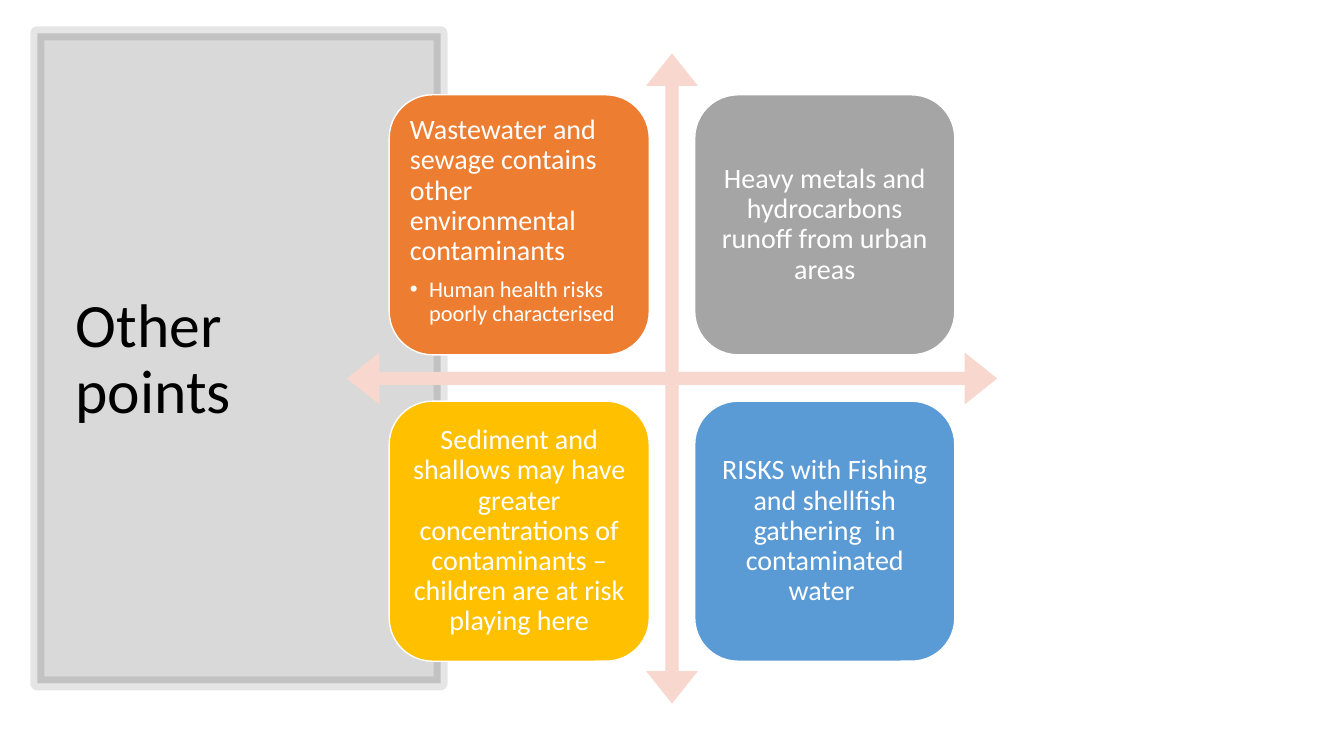
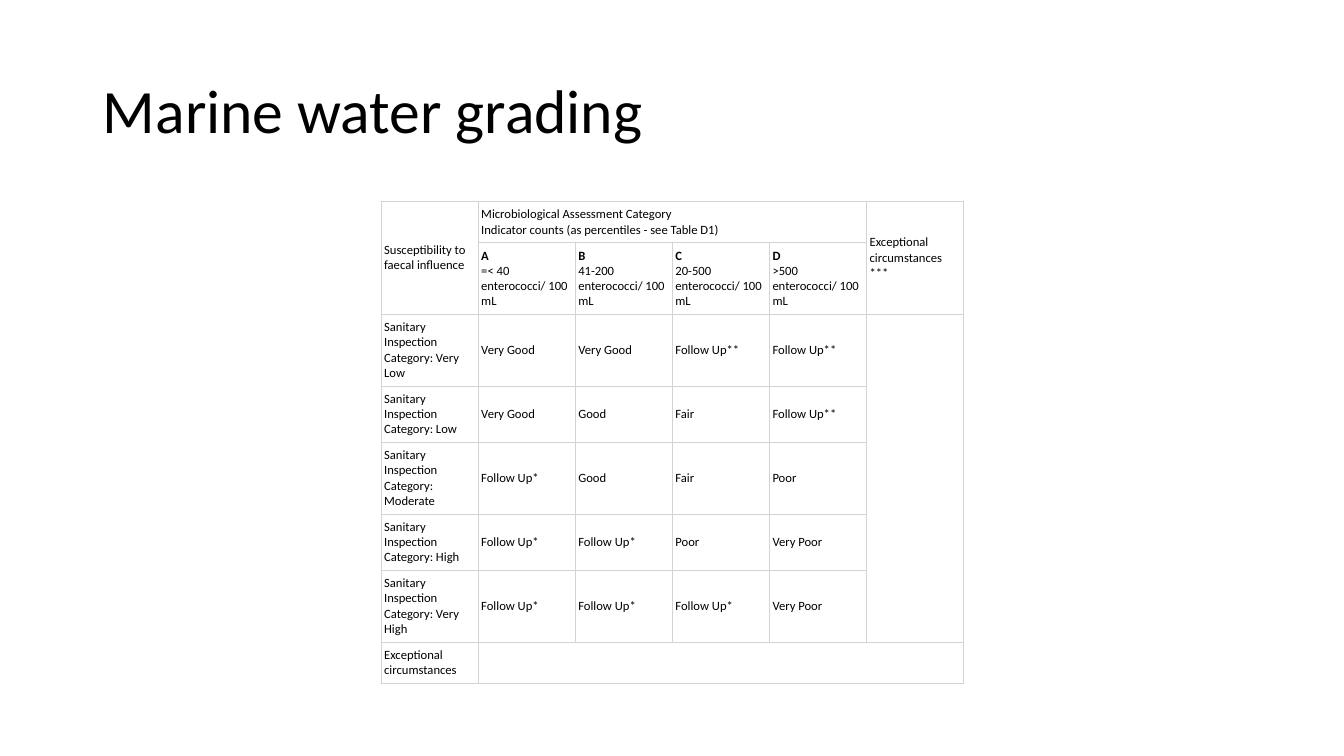
from dataclasses import dataclass
from typing import Optional

from lxml.etree import SubElement
from pptx import Presentation
from pptx.dml.color import RGBColor
from pptx.enum.shapes import MSO_SHAPE
from pptx.enum.text import MSO_ANCHOR, MSO_AUTO_SIZE, PP_ALIGN
from pptx.oxml.ns import qn
from pptx.util import Emu, Pt

SCALE = 9144
FONT = "Calibri"
HUES = {
    "ink": "000000", "paper": "FFFFFF", "arrow": "F8D7CE", "rule": "D3D3D3",
    "orange": "ED7D31", "gray": "A5A5A5", "gold": "FFC000", "blue": "5B9BD5",
}


@dataclass(frozen=True)
class Box:
    """A place on the slide in px."""
    left: int
    top: int
    width: int
    height: int


@dataclass(frozen=True)
class Card:
    """A coloured card with an optional bullet."""
    text: str
    hue: str
    point: Optional[str] = None


@dataclass(frozen=True)
class Span:
    """A merged block of table cells."""
    row: int
    col: int
    last_row: int
    last_col: int


CARDS = [
    Card("Wastewater and sewage contains other environmental contaminants",
         "orange", "Human health risks poorly characterised"),
    Card("Heavy metals and hydrocarbons runoff from urban areas", "gray"),
    Card("Sediment and shallows may have greater concentrations of "
         "contaminants – children are at risk playing here", "gold"),
    Card("RISKS with Fishing and shellfish gathering  in contaminated water ",
         "blue"),
]
CROSS = Box(344, 53, 645, 645)
FIRST = Box(386, 94, 258, 258)
STEP_X, STEP_Y = 303, 304

GRADES = [
    ["Susceptibility to faecal influence",
     "Microbiological Assessment Category\n"
     "Indicator counts (as percentiles - see Table D1)",
     "", "", "", "Exceptional circumstances ***"],
    ["", "A\n=< 40 enterococci/ 100 mL", "B\n41-200 enterococci/ 100 mL",
     "C\n20-500 enterococci/ 100 mL", "D\n>500 enterococci/ 100 mL", ""],
    ["Sanitary Inspection Category: Very Low",
     "Very Good", "Very Good", "Follow Up**", "Follow Up**", ""],
    ["Sanitary Inspection Category: Low",
     "Very Good", "Good", "Fair", "Follow Up**", ""],
    ["Sanitary Inspection Category: Moderate",
     "Follow Up*", "Good", "Fair", "Poor", ""],
    ["Sanitary Inspection Category: High",
     "Follow Up*", "Follow Up*", "Poor", "Very Poor", ""],
    ["Sanitary Inspection Category: Very High",
     "Follow Up*", "Follow Up*", "Follow Up*", "Very Poor", ""],
    ["Exceptional circumstances", "", "", "", "", ""],
]
ROWS = [41, 71, 71, 56, 71, 56, 71, 41]
SPANS = [Span(0, 0, 1, 0), Span(0, 1, 0, 4), Span(0, 5, 1, 5),
         Span(2, 5, 6, 5), Span(7, 1, 7, 5)]


def px(size: int) -> Emu:
    """Turn px into EMU."""
    return Emu(size * SCALE)


def place(box: Box) -> tuple:
    """Return the box as four EMU lengths."""
    return px(box.left), px(box.top), px(box.width), px(box.height)


def tint(hue: str) -> RGBColor:
    """Look up a colour."""
    return RGBColor.from_string(HUES[hue])


def fade(fill, share: int) -> None:
    """Make a solid fill partly clear, with share as percent opaque."""
    color = fill._xPr.find(qn("a:solidFill"))[0]
    SubElement(color, qn("a:alpha"), val=str(share * 1000))


def write(para, text: str, size: int, hue: str, bold: bool = False) -> None:
    """Add one styled run."""
    run = para.add_run()
    run.text = text
    run.font.name, run.font.size, run.font.bold = FONT, Pt(size), bold
    run.font.color.rgb = tint(hue)


def inset(item, side: int, edge: int) -> None:
    """Set the margins of a frame or cell."""
    item.margin_left = item.margin_right = px(side)
    item.margin_top = item.margin_bottom = px(edge)


def head(slide, text: str, box: Box):
    """Fill and place the title."""
    title = slide.shapes.title
    title.left, title.top, title.width, title.height = place(box)
    frame = title.text_frame
    frame.word_wrap, frame.auto_size = True, MSO_AUTO_SIZE.NONE
    frame.vertical_anchor = MSO_ANCHOR.MIDDLE
    para = frame.paragraphs[0]
    para.alignment, para.line_spacing = PP_ALIGN.LEFT, 0.9
    write(para, text, 44, "ink")
    return title


def shape(owner, kind: MSO_SHAPE, box: Box, hue: str):
    """Add a flat filled shape without a line."""
    item = owner.shapes.add_shape(kind, *place(box))
    item.shadow.inherit = False
    item.fill.solid()
    item.fill.fore_color.rgb = tint(hue)
    item.line.fill.background()
    return item


def edge(item, hue: str, width: int) -> None:
    """Give a shape a solid line."""
    item.line.color.rgb = tint(hue)
    item.line.width = Pt(width)


def dot(para) -> None:
    """Turn a paragraph into a hanging bullet."""
    para.level = 1
    props = para._p.get_or_add_pPr()
    props.set("marL", str(px(19)))
    props.set("indent", str(px(-19)))
    SubElement(props, qn("a:buFont"), typeface="Arial")
    SubElement(props, qn("a:buChar"), char="•")


def draw(group, card: Card, box: Box) -> None:
    """Draw a card and its text."""
    item = shape(group, MSO_SHAPE.ROUNDED_RECTANGLE, box, card.hue)
    edge(item, "paper", 1)
    frame = item.text_frame
    frame.word_wrap = True
    inset(frame, 8, 8)
    frame.vertical_anchor = MSO_ANCHOR.TOP if card.point else MSO_ANCHOR.MIDDLE
    para = frame.paragraphs[0]
    para.alignment = PP_ALIGN.LEFT if card.point else PP_ALIGN.CENTER
    para.line_spacing = 0.9
    write(para, card.text, 20, "paper")
    if card.point:
        para.space_after = Pt(8)
        para = frame.add_paragraph()
        para.alignment, para.line_spacing = PP_ALIGN.LEFT, 0.9
        dot(para)
        write(para, card.point, 16, "paper")


def points(slide) -> None:
    """Build the slide of four cards round a cross."""
    title = head(slide, "Other points", Box(65, 70, 255, 575))
    panel = shape(slide, MSO_SHAPE.RECTANGLE, Box(37, 33, 400, 645), "ink")
    fade(panel.fill, 15)
    edge(panel, "ink", 10)
    fade(panel.line.fill, 10)
    title.element.addprevious(panel.element)
    group = slide.shapes.add_group_shape()
    cross = shape(group, MSO_SHAPE.QUAD_ARROW, CROSS, "arrow")
    for spot, size in enumerate((0.02, 0.04, 0.05)):
        cross.adjustments[spot] = size
    for spot, card in enumerate(CARDS):
        row, col = divmod(spot, 2)
        draw(group, card, Box(FIRST.left + col * STEP_X,
                              FIRST.top + row * STEP_Y,
                              FIRST.width, FIRST.height))


def frame_cell(cell) -> None:
    """Rule all sides of a cell and clear its fill."""
    props = cell._tc.get_or_add_tcPr()
    for side in ("a:lnL", "a:lnR", "a:lnT", "a:lnB"):
        line = SubElement(props, qn(side), w=str(Pt(0.75)))
        fill = SubElement(line, qn("a:solidFill"))
        SubElement(fill, qn("a:srgbClr"), val=HUES["rule"])
    cell.fill.background()
    inset(cell, 3, 5)
    cell.vertical_anchor = MSO_ANCHOR.MIDDLE


def grades(slide) -> None:
    """Build the slide with the grading table."""
    head(slide, "Marine water grading", Box(92, 40, 1150, 145))
    box = Box(378, 200, 578, sum(ROWS))
    table = slide.shapes.add_table(
        len(GRADES), len(GRADES[0]), *place(box)).table
    table.first_row = table.horz_banding = False
    for row, high in zip(table.rows, ROWS):
        row.height = px(high)
    for span in SPANS:
        table.cell(span.row, span.col).merge(
            table.cell(span.last_row, span.last_col))
    for row, texts in enumerate(GRADES):
        for col, text in enumerate(texts):
            cell = table.cell(row, col)
            frame_cell(cell)
            para = cell.text_frame.paragraphs[0]
            for part, line in enumerate(text.split("\n") if text else []):
                if part:
                    para.add_line_break()
                write(para, line, 9, "ink", row == 1 and part == 0)


def main() -> None:
    """Build and save the deck."""
    deck = Presentation()
    deck.slide_width, deck.slide_height = px(1333), px(750)
    for build in (points, grades):
        build(deck.slides.add_slide(deck.slide_layouts[5]))
    deck.save("out.pptx")


if __name__ == "__main__":
    main()
